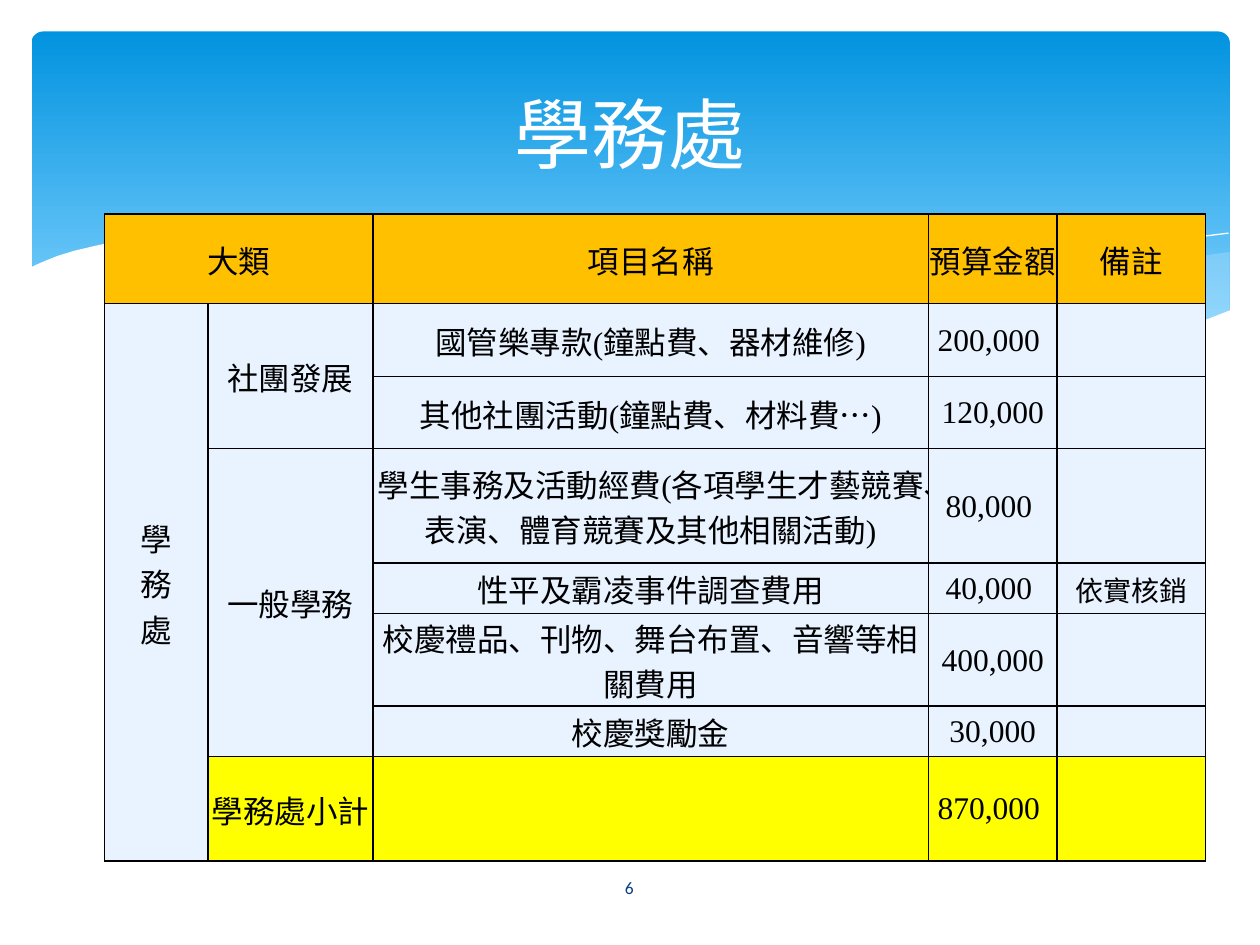
from collections import namedtuple
from dataclasses import dataclass

from lxml.etree import SubElement
from pptx import Presentation
from pptx.dml.color import RGBColor as Rgb
from pptx.enum.shapes import MSO_SHAPE as Shape
from pptx.enum.text import MSO_ANCHOR as Anchor, PP_ALIGN as Align
from pptx.oxml.ns import qn
from pptx.util import Inches, Pt

Box = namedtuple("Box", "left top width height")


@dataclass(frozen=True)
class Theme:
    """Colours, fonts and type sizes of the slide."""
    sky: str = "0293E0"
    sky_light: str = "83D3FE"
    wave: str = "C6E7FC"
    white: str = "FFFFFF"
    ink: str = "000000"
    header: str = "FFC000"
    body: str = "E8F3FF"
    subtotal: str = "FFFF00"
    number: str = "073E87"
    heading_font: str = "Calibri"
    table_font: str = "Times New Roman"
    title_size: int = 44
    table_size: int = 18
    remark_size: int = 16
    number_size: int = 10


THEME = Theme()

RIGHT_WAVE = [(314, 0), (287, 4), (245, 13), (200, 23), (144, 37), (92, 48), (45, 57), (0, 65),
              (30, 69), (58, 72), (84, 75), (108, 77), (142, 78), (174, 77), (202, 75),
              (228, 72), (252, 67), (274, 62), (302, 52), (315, 47), (315, 0)]
MIDDLE_WAVE = [(607, 88), (580, 86), (521, 75), (455, 62), (382, 46), (343, 37), (312, 29),
               (283, 23), (255, 18), (228, 13), (203, 9), (156, 4), (113, 1), (75, 0), (42, 2),
               (13, 4), (0, 6), (37, 11), (76, 18), (118, 26), (163, 37), (205, 47), (280, 63),
               (332, 73), (379, 81), (423, 87), (462, 91), (499, 93), (532, 93), (562, 92),
               (590, 90)]
LONG_CREST = [(0, 8), (19, 5), (35, 3), (54, 2), (78, 0), (107, 0), (141, 1), (180, 3), (224, 7),
              (273, 13), (327, 21), (386, 32), (451, 46), (522, 64), (598, 85)]
RIGHT_CREST = [(0, 72), (40, 61), (82, 50), (135, 38), (193, 25), (253, 14), (282, 9), (311, 5),
               (338, 3), (362, 0)]
WHITE_WAVE = [(954, 62), (936, 69), (917, 75), (897, 81), (876, 85), (852, 89), (827, 91),
              (800, 93), (770, 92), (738, 91), (703, 88), (665, 84), (625, 78), (580, 70),
              (532, 61), (480, 49), (424, 36), (368, 23), (317, 13), (269, 6), (227, 2), (188, 0),
              (154, 0), (123, 1), (96, 3), (72, 7), (53, 11), (36, 15), (23, 19), (13, 23),
              (6, 26), (0, 29), (0, 145), (954, 145)]

COLUMN_WIDTHS = [0.82, 1.31, 4.41, 1.02, 1.18]
ROW_HEIGHTS = [0.71, 0.58, 0.57, 0.91, 0.4, 0.4, 0.4, 0.83]
MERGES = [((0, 0), (0, 1)), ((1, 0), (7, 0)), ((1, 1), (2, 1)), ((3, 1), (6, 1))]
BUDGET = [
    ["大類", "", "項目名稱", "預算金額", "備註"],
    ["學\v務\v處", "社團發展", "國管樂專款(鐘點費、器材維修)", "200,000 ", ""],
    ["", "", "其他社團活動(鐘點費、材料費…)", "120,000", ""],
    ["", "一般學務", "學生事務及活動經費(各項學生才藝競賽、表演、體育競賽及其他相關活動)", "80,000 ", ""],
    ["", "", "性平及霸凌事件調查費用", "40,000 ", "依實核銷"],
    ["", "", "校慶禮品、刊物、舞台布置、音響等相關費用", "400,000", ""],
    ["", "", "校慶獎勵金", "30,000", ""],
    ["", "學務處小計", "", "870,000 ", ""],
]


def inches(box):
    """Convert a box given in inches to lengths."""
    return [Inches(side) for side in box]


def style_text(frame, font, size, color):
    """Centre the text both ways and format its runs."""
    frame.word_wrap = True
    frame.vertical_anchor = Anchor.MIDDLE
    for paragraph in frame.paragraphs:
        paragraph.alignment = Align.CENTER
        paragraph.font.size = Pt(size)
        for run in paragraph.runs:
            run.font.name = font
            run.font.size = Pt(size)
            run.font.color.rgb = Rgb.from_string(color)


def add_curve(slide, left, top, points, fill=None, alpha=100):
    """Draw a filled wave, or a white crest line when no fill is given."""
    (start_x, start_y), *rest = points
    builder = slide.shapes.build_freeform(start_x, start_y, scale=Inches(0.01))
    builder.add_line_segments(rest, close=fill is not None)
    curve = builder.convert_to_shape(Inches(left), Inches(top))
    curve.shadow.inherit = False
    if fill is None:
        curve.fill.background()
        curve.line.color.rgb = Rgb.from_string(THEME.white)
        curve.line.width = Pt(0)
        return
    curve.fill.solid()
    curve.fill.fore_color.rgb = Rgb.from_string(fill)
    curve.line.fill.background()
    if alpha < 100:
        color = curve.element.spPr.find(qn("a:solidFill"))[0]
        SubElement(color, qn("a:alpha"), val=str(alpha * 1000))


def add_banner(slide, box):
    """Draw the blue gradient banner and the waves along its foot."""
    banner = slide.shapes.add_shape(Shape.ROUNDED_RECTANGLE, *inches(box))
    banner.adjustments[0] = 0.034
    banner.shadow.inherit = False
    banner.line.fill.background()
    banner.fill.gradient()
    banner.fill.gradient_angle = 270
    stops = zip(banner.fill.gradient_stops, (0, 0.9), (THEME.sky, THEME.sky_light))
    for stop, position, color in stops:
        stop.position = position
        stop.color.rgb = Rgb.from_string(color)
    left, top = box.left, box.top
    add_curve(slide, left + 6.36, top + 1.75, RIGHT_WAVE, THEME.wave, 29)
    add_curve(slide, left + 2.61, top + 1.6, MIDDLE_WAVE, THEME.wave, 40)
    add_curve(slide, left + 2.84, top + 1.62, LONG_CREST)
    add_curve(slide, left + 5.88, top + 1.6, RIGHT_CREST)
    add_curve(slide, left - 0.02, top + 1.59, WHITE_WAVE, THEME.white)


def add_title(slide, box, text):
    """Place the title placeholder in front of the banner."""
    title = slide.shapes.title
    slide.shapes.element.append(title.element)
    title.left, title.top, title.width, title.height = inches(box)
    title.text_frame.text = text
    style_text(title.text_frame, THEME.heading_font, THEME.title_size, THEME.white)


def add_borders(cell):
    """Give a cell a thin dark line on each side."""
    properties = cell._tc.get_or_add_tcPr()
    for index, side in enumerate(("a:lnL", "a:lnR", "a:lnT", "a:lnB")):
        line = properties.makeelement(qn(side), {"w": str(Pt(1))})
        properties.insert(index, line)
        SubElement(SubElement(line, qn("a:solidFill")), qn("a:srgbClr"), val=THEME.ink)


def cell_fill(row, column):
    """Return the fill for a place in the budget table."""
    if row == 0:
        return THEME.header
    if row == len(BUDGET) - 1 and column > 0:
        return THEME.subtotal
    return THEME.body


def add_budget_table(slide, box):
    """Build the budget table with its merged category cells."""
    frame = slide.shapes.add_table(len(BUDGET), len(COLUMN_WIDTHS), *inches(box))
    table = frame.table
    for column, width in zip(table.columns, COLUMN_WIDTHS):
        column.width = Inches(width)
    for row, height in zip(table.rows, ROW_HEIGHTS):
        row.height = Inches(height)
    for r, entries in enumerate(BUDGET):
        for c, entry in enumerate(entries):
            cell = table.cell(r, c)
            cell.text_frame.text = entry
            cell.margin_left = cell.margin_right = cell.margin_top = Inches(0.01)
            cell.margin_bottom = 0
            cell.vertical_anchor = Anchor.MIDDLE
            cell.fill.solid()
            cell.fill.fore_color.rgb = Rgb.from_string(cell_fill(r, c))
            is_remark = r > 0 and c == len(entries) - 1
            size = THEME.remark_size if is_remark else THEME.table_size
            style_text(cell.text_frame, THEME.table_font, size, THEME.ink)
            for run in cell.text_frame.paragraphs[0].runs:
                run.font.bold = False
            add_borders(cell)
    for first, last in MERGES:
        table.cell(*first).merge(table.cell(*last))


def add_page_number(slide, box, text):
    """Write the page number at the foot of the slide."""
    number = slide.shapes.add_textbox(*inches(box))
    number.text_frame.text = text
    style_text(number.text_frame, THEME.heading_font, THEME.number_size, THEME.number)


def main():
    """Build the budget slide and save it."""
    deck = Presentation()
    deck.slide_width, deck.slide_height = Inches(10), Inches(7.5)
    slide = deck.slides.add_slide(deck.slide_layouts[5])
    add_banner(slide, Box(0.25, 0.25, 9.51, 2.7))
    add_title(slide, Box(0.5, 0.37, 9, 1.37), "學務處")
    add_budget_table(slide, Box(0.83, 1.7, sum(COLUMN_WIDTHS), sum(ROW_HEIGHTS)))
    add_page_number(slide, Box(4.36, 6.84, 1.27, 0.4), "6")
    deck.save("out.pptx")


if __name__ == "__main__":
    main()
